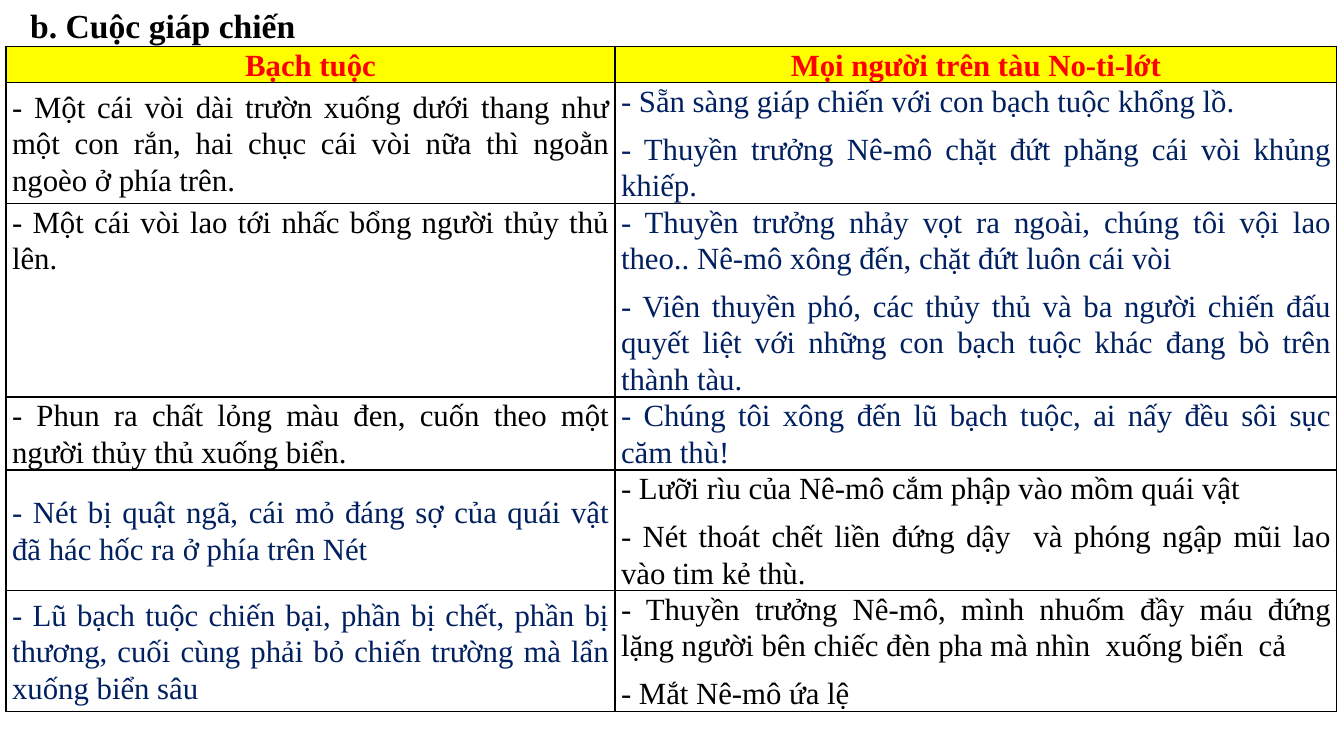
from lxml.etree import SubElement
from pptx import Presentation
from pptx.dml.color import RGBColor
from pptx.enum.text import MSO_ANCHOR as Anchor, PP_ALIGN as Align
from pptx.oxml.ns import qn
from pptx.util import Inches, Pt

BLACK = RGBColor(0x00, 0x00, 0x00)
NAVY = RGBColor(0x00, 0x20, 0x60)
RED = RGBColor(0xFF, 0x00, 0x00)
YELLOW = RGBColor(0xFF, 0xFF, 0x00)
WHITE = RGBColor(0xFF, 0xFF, 0xFF)
FONT = "Times New Roman"

COLUMN_WIDTHS = [6.04, 7.16]
ROW_HEIGHTS = [0.36, 1.19, 1.92, 0.72, 1.19, 1.19]

# Each cell: text colour and its paragraphs
ROWS = [
    [(RED, ["Bạch tuộc"]),
     (RED, ["Mọi người trên tàu No-ti-lớt"])],
    [(BLACK, ["- Một cái vòi dài trườn xuống dưới thang như một con rắn, "
              "hai chục cái vòi nữa thì ngoằn ngoèo ở phía trên."]),
     (NAVY, ["- Sẵn sàng giáp chiến với con bạch tuộc khổng lồ.",
             "- Thuyền trưởng Nê-mô chặt đứt phăng cái vòi khủng khiếp."])],
    [(BLACK, ["- Một cái vòi lao tới nhấc bổng người thủy thủ lên."]),
     (NAVY, ["- Thuyền trưởng nhảy vọt ra ngoài, chúng tôi vội lao theo.. "
             "Nê-mô xông đến, chặt đứt luôn cái vòi",
             "- Viên thuyền phó, các thủy thủ và ba người chiến đấu quyết liệt "
             "với những con bạch tuộc khác đang bò trên thành tàu."])],
    [(BLACK, ["- Phun ra chất lỏng màu đen, cuốn theo một người thủy thủ xuống biển."]),
     (NAVY, ["- Chúng tôi xông đến lũ bạch tuộc, ai nấy đều sôi sục căm thù!"])],
    [(NAVY, ["- Nét bị quật ngã, cái mỏ đáng sợ của quái vật đã hác hốc ra ở phía trên Nét"]),
     (BLACK, ["- Lưỡi rìu của Nê-mô cắm phập vào mồm quái vật",
              "- Nét thoát chết liền đứng dậy  và phóng ngập mũi lao vào tim kẻ thù."])],
    [(NAVY, ["- Lũ bạch tuộc chiến bại, phần bị chết, phần bị thương, "
             "cuối cùng phải bỏ chiến trường mà lẩn xuống biển sâu"]),
     (BLACK, ["- Thuyền trưởng Nê-mô, mình nhuốm đầy máu đứng lặng người "
              "bên chiếc đèn pha mà nhìn  xuống biển  cả",
              "- Mắt Nê-mô ứa lệ"])],
]


def add_run(paragraph, text, size, color, bold):
    run = paragraph.add_run()
    run.text = text
    run.font.name = FONT
    run.font.size = Pt(size)
    run.font.bold = bold
    run.font.color.rgb = color


def style_cell(cell, fill):
    """Set borders before the fill, as the cell's XML order requires."""
    properties = cell._tc.get_or_add_tcPr()
    for side in ("a:lnL", "a:lnR", "a:lnT", "a:lnB"):
        line = SubElement(properties, qn(side), w=str(Pt(1)))
        solid = SubElement(line, qn("a:solidFill"))
        SubElement(solid, qn("a:srgbClr"), val=str(BLACK))
    cell.fill.solid()
    cell.fill.fore_color.rgb = fill
    cell.margin_left = cell.margin_right = Inches(0.06)
    cell.margin_top = cell.margin_bottom = 0


presentation = Presentation()
presentation.slide_width = Inches(13.33)
presentation.slide_height = Inches(7.5)
slide = presentation.slides.add_slide(presentation.slide_layouts[5])

title = slide.shapes.title
title.left, title.top = Inches(0.2), Inches(0)
title.width, title.height = Inches(12.71), Inches(0.5)
title.text_frame.vertical_anchor = Anchor.TOP
title.text_frame.word_wrap = True
heading = title.text_frame.paragraphs[0]
heading.alignment = Align.JUSTIFY
add_run(heading, "b. Cuộc giáp chiến", 24, BLACK, True)

table = slide.shapes.add_table(
    len(ROW_HEIGHTS), len(COLUMN_WIDTHS), Inches(0.06), Inches(0.46),
    Inches(sum(COLUMN_WIDTHS)), Inches(sum(ROW_HEIGHTS))).table
table.horz_banding = False
for column, width in zip(table.columns, COLUMN_WIDTHS):
    column.width = Inches(width)
for row, height in zip(table.rows, ROW_HEIGHTS):
    row.height = Inches(height)

for row_index, row_content in enumerate(ROWS):
    is_header = row_index == 0
    for column_index, (color, texts) in enumerate(row_content):
        cell = table.cell(row_index, column_index)
        style_cell(cell, YELLOW if is_header else WHITE)
        cell.vertical_anchor = Anchor.TOP if row_index == 2 else Anchor.MIDDLE
        for text_index, text in enumerate(texts):
            frame = cell.text_frame
            paragraph = frame.add_paragraph() if text_index else frame.paragraphs[0]
            paragraph.alignment = Align.CENTER if is_header else Align.JUSTIFY
            paragraph.line_spacing = 1.07
            paragraph.space_after = Pt(8)
            add_run(paragraph, text, 22, color, is_header)

presentation.save("out.pptx")
